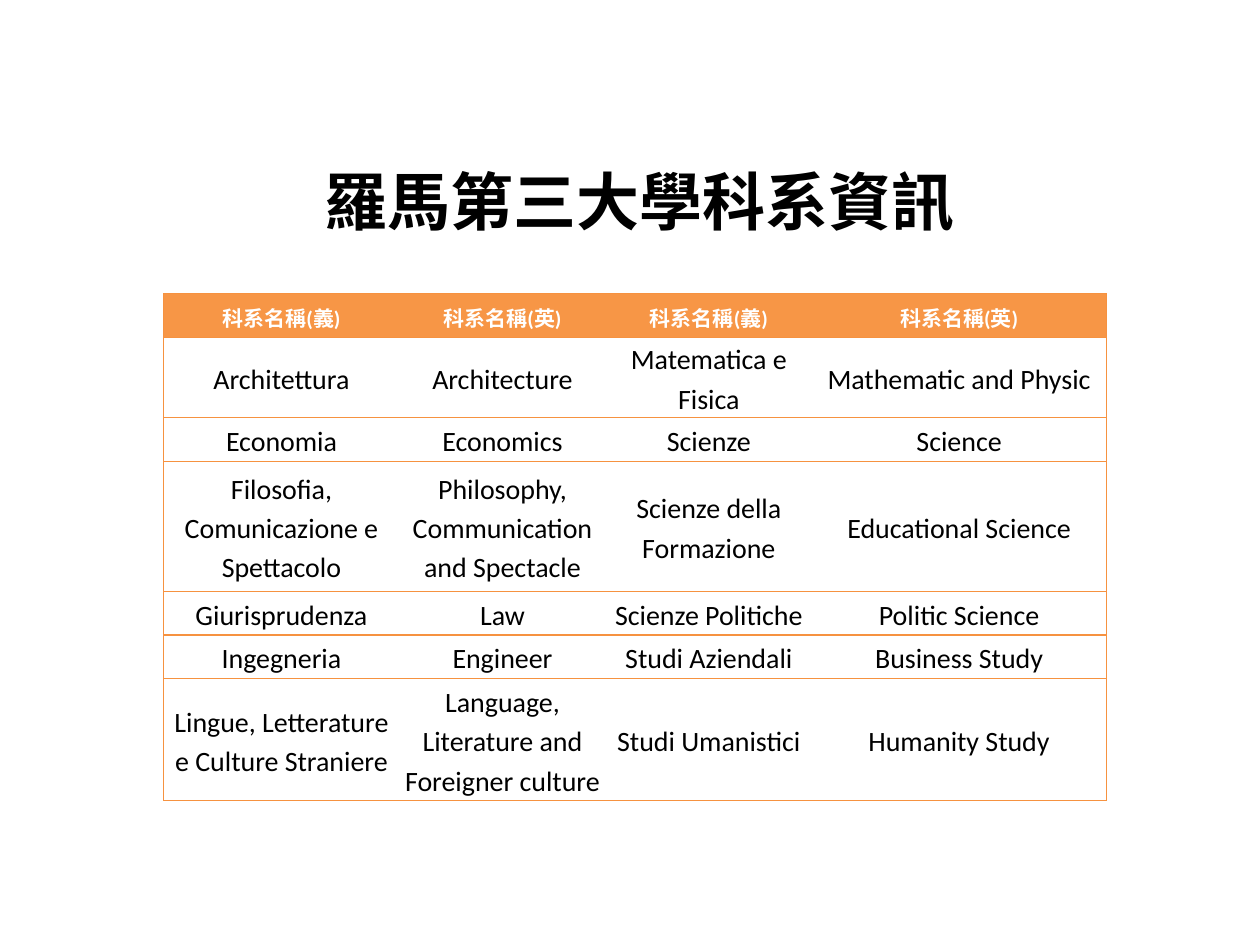
from lxml import etree
from pptx import Presentation
from pptx import util as u
from pptx.dml.color import RGBColor
from pptx.enum import text
from pptx.oxml.ns import qn

PLAIN_TABLE = "{2D5ABB26-0587-4C30-8999-92F81FD0307C}"
HEADER = ["科系名稱(義)", "科系名稱(英)"] * 2
DEPARTMENTS = [
    ["Architettura", "Architecture", "Matematica e Fisica", "Mathematic and Physic"],
    ["Economia", "Economics", "Scienze", "Science"],
    ["Filosofia, Comunicazione e Spettacolo",
     "Philosophy, Communication and Spectacle",
     "Scienze della Formazione", "Educational Science"],
    ["Giurisprudenza", "Law", "Scienze Politiche", "Politic Science"],
    ["Ingegneria", "Engineer", "Studi Aziendali", "Business Study"],
    ["Lingue, Letterature e Culture Straniere",
     "Language, Literature and\nForeigner culture",
     "Studi Umanistici", "Humanity Study"],
]
COLUMN_WIDTHS = [4.75, 4.16, 4.16, 5.93]
ROW_HEIGHTS = [0.88, 1.62, 0.88, 2.62, 0.88, 0.88, 2.46]


def colour(hex_value):
    return RGBColor.from_string(hex_value)


def apply(target, values):
    for name, value in values.items():
        setattr(target, name, value)


class SlideBuilder:
    accent = "F79646"
    line = "F69240"
    title_font = {"name": "Arial", "size": u.Pt(36), "bold": True}
    header_font = {"name": "Calibri", "size": u.Pt(12), "bold": True}
    body_font = {"name": "Calibri", "size": u.Pt(16), "bold": False}
    cell_format = {
        "margin_left": u.Cm(0.03), "margin_right": u.Cm(0.03),
        "margin_top": 0, "margin_bottom": 0,
        "vertical_anchor": text.MSO_ANCHOR.MIDDLE,
    }

    def __init__(self, slide):
        self.slide = slide

    def style_text(self, frame, font, hex_value, **paragraph_format):
        for paragraph in frame.paragraphs:
            apply(paragraph, {"alignment": text.PP_ALIGN.CENTER, **paragraph_format})
            apply(paragraph.font, font)
            paragraph.font.color.rgb = colour(hex_value)

    def title(self, words, left, top, width, height):
        box = self.slide.shapes.add_textbox(*map(u.Cm, (left, top, width, height)))
        frame = box.text_frame
        apply(frame, {"word_wrap": True, "vertical_anchor": text.MSO_ANCHOR.BOTTOM})
        frame.text = words
        self.style_text(frame, self.title_font, "000000")

    def border(self, cell, sides):
        properties = cell._tc.get_or_add_tcPr()
        for side in sides:
            edge = etree.SubElement(properties, qn(f"a:ln{side}"), w=str(u.Pt(0.75)))
            fill = etree.SubElement(edge, qn("a:solidFill"))
            etree.SubElement(fill, qn("a:srgbClr"), val=self.line)

    def table(self, rows, left, top, widths, heights):
        frame = self.slide.shapes.add_table(
            len(rows), len(widths), u.Cm(left), u.Cm(top),
            u.Cm(sum(widths)), u.Cm(sum(heights)))
        grid = frame.table
        grid.horz_banding = False
        grid._tbl.tblPr.find(qn("a:tableStyleId")).text = PLAIN_TABLE
        for column, width in zip(grid.columns, widths):
            column.width = u.Cm(width)
        for row, height in zip(grid.rows, heights):
            row.height = u.Cm(height)
        for r, row in enumerate(rows):
            for c, words in enumerate(row):
                self.cell(grid.cell(r, c), words, r == 0, c == 0, c == len(row) - 1)

    def cell(self, cell, words, is_header, is_first, is_last):
        apply(cell, self.cell_format)
        cell.text = words
        # Outer edges on the sides, a rule above and below every row
        self.border(cell, "L" * is_first + "R" * is_last + "TB")
        if is_header:
            cell.fill.solid()
            cell.fill.fore_color.rgb = colour(self.accent)
        else:
            cell.fill.background()
        self.style_text(cell.text_frame,
                        self.header_font if is_header else self.body_font,
                        "FFFFFF" if is_header else "000000", line_spacing=1.15)


def main():
    deck = Presentation()
    apply(deck, {"slide_width": u.Cm(25.4), "slide_height": u.Cm(19.05)})
    builder = SlideBuilder(deck.slides.add_slide(deck.slide_layouts[6]))

    # Heading
    builder.title("羅馬第三大學科系資訊", 5.1, 1.93, 15.6, 3)

    # Departments in Italian and English
    builder.table([HEADER] + DEPARTMENTS, 3.3, 5.92, COLUMN_WIDTHS, ROW_HEIGHTS)

    deck.save("out.pptx")


if __name__ == "__main__":
    main()
